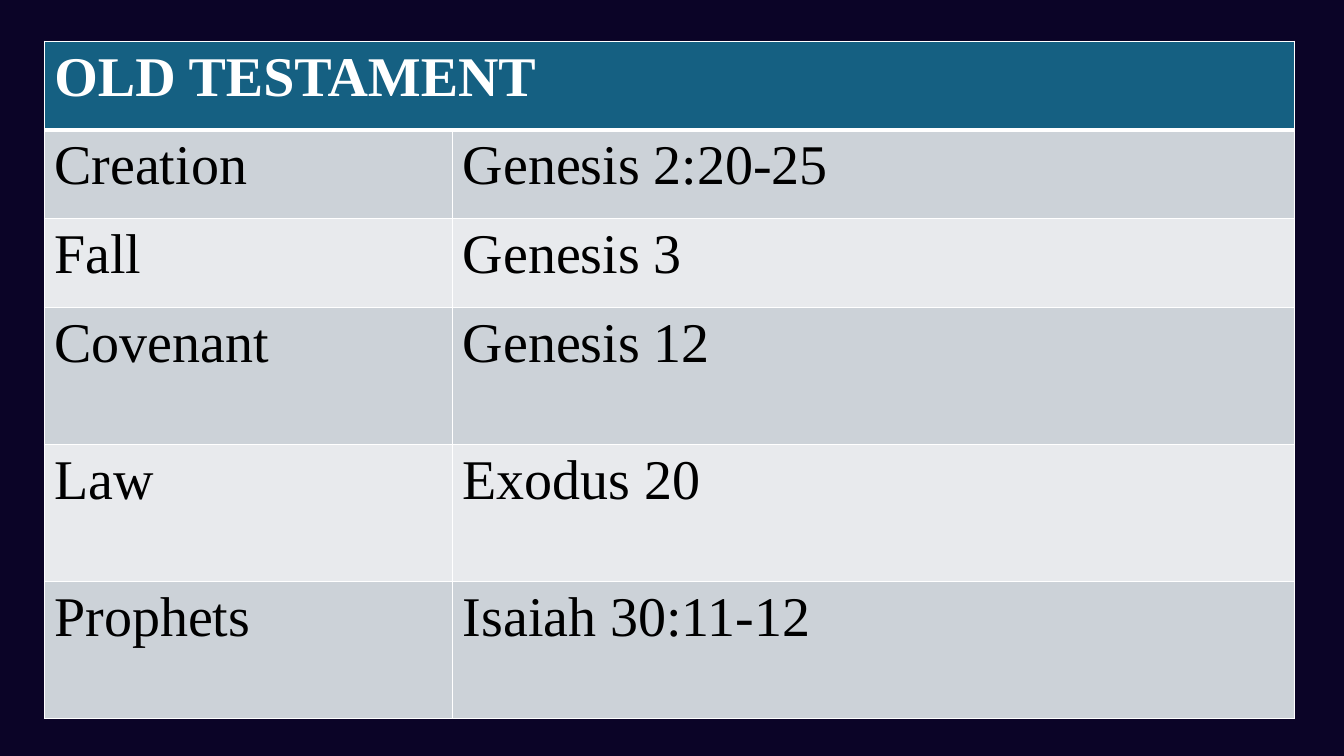
import pptx
import pptx.dml.color
import pptx.oxml
import pptx.oxml.ns
import pptx.util
from pptx.util import Inches

RGBColor = pptx.dml.color.RGBColor
NAVY = RGBColor(0x0B, 0x04, 0x27)
TEAL = RGBColor(0x15, 0x60, 0x82)
GREY = RGBColor(0xCC, 0xD2, 0xD8)
PALE = RGBColor(0xE8, 0xEA, 0xED)
WHITE = RGBColor(0xFF, 0xFF, 0xFF)
BLACK = RGBColor(0x00, 0x00, 0x00)

TITLE = "OLD TESTAMENT"
READINGS = [
    ("Creation", "Genesis 2:20-25"),
    ("Fall", "Genesis 3"),
    ("Covenant", "Genesis 12"),
    ("Law", "Exodus 20"),
    ("Prophets", "Isaiah 30:11-12"),
]
WIDTHS = [4.05, 8.35]
HEIGHTS = [0.88] * 3 + [1.36] * 3


def write(frame, text, font="Times New Roman", size=40, color=BLACK, bold=False):
    run = frame.paragraphs[0].add_run()
    run.text = text
    run.font.name = font
    run.font.size = pptx.util.Pt(size)
    run.font.color.rgb = color
    run.font.bold = bold


class Deck:
    def __init__(self, slide, line=WHITE):
        self.slide = slide
        self.line = line

    def ground(self, color):
        fill = self.slide.background.fill
        fill.solid()
        fill.fore_color.rgb = color

    def edge(self, cell, top=1, bottom=1):
        """Draw the four borders of a cell, widths in points."""
        props = cell._tc.get_or_add_tcPr()
        for side, width in zip("LRTB", (1, 1, top, bottom)):
            props.append(pptx.oxml.parse_xml(
                f'<a:ln{side} {pptx.oxml.ns.nsdecls("a")} w="{pptx.util.Pt(width)}">'
                f'<a:solidFill><a:srgbClr val="{self.line}"/></a:solidFill>'
                f'</a:ln{side}>'))

    def cell(self, cell, text, fill, top=1, bottom=1, **style):
        self.edge(cell, top, bottom)
        cell.fill.solid()
        cell.fill.fore_color.rgb = fill
        if text:
            write(cell.text_frame, text, **style)

    def table(self, title, rows, left, top):
        frame = self.slide.shapes.add_table(
            len(HEIGHTS), len(WIDTHS), Inches(left), Inches(top),
            Inches(sum(WIDTHS)), Inches(sum(HEIGHTS)))
        table = frame.table
        for col, width in zip(table.columns, WIDTHS):
            col.width = Inches(width)
        for row, height in zip(table.rows, HEIGHTS):
            row.height = Inches(height)
        table.cell(0, 0).merge(table.cell(0, 1))
        for c, text in enumerate((title, "")):
            self.cell(table.cell(0, c), text, TEAL, bottom=3, color=WHITE, bold=True)
        for r, row in enumerate(rows, 1):
            for c, text in enumerate(row):
                self.cell(table.cell(r, c), text, GREY if r % 2 else PALE,
                          top=3 if r == 1 else 1)


def main():
    show = pptx.Presentation()
    show.slide_width = Inches(13.33)
    show.slide_height = Inches(7.5)
    deck = Deck(show.slides.add_slide(show.slide_layouts[6]))
    deck.ground(NAVY)
    deck.table(TITLE, READINGS, 0.44, 0.41)
    show.save("out.pptx")


if __name__ == "__main__":
    main()
